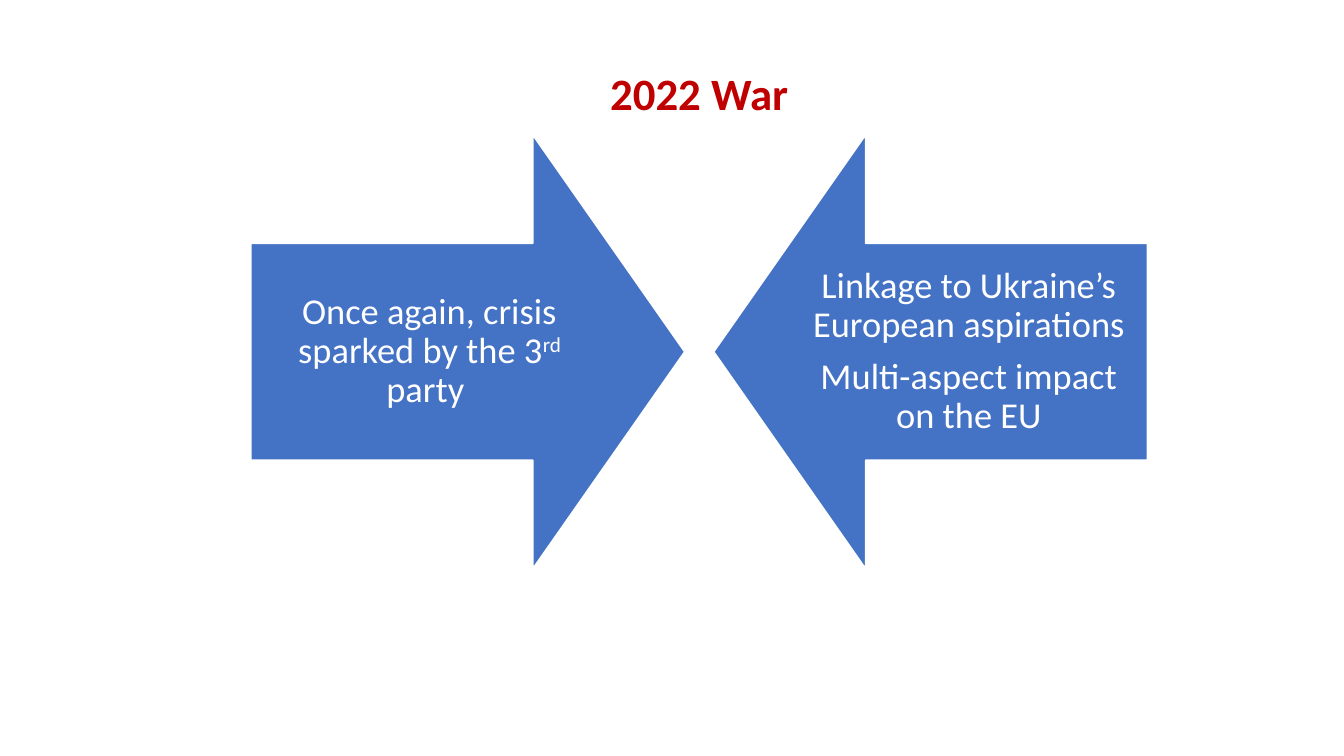
from dataclasses import dataclass

from pptx import Presentation
from pptx.dml.color import RGBColor
from pptx.enum.shapes import MSO_SHAPE
from pptx.enum.text import MSO_ANCHOR, MSO_AUTO_SIZE, PP_ALIGN
from pptx.util import Inches, Pt

ARROW = MSO_SHAPE.DOWN_ARROW
TOP, MIDDLE = MSO_ANCHOR.TOP, MSO_ANCHOR.MIDDLE
CENTER = PP_ALIGN.CENTER
NO_FIT = MSO_AUTO_SIZE.NONE


@dataclass(frozen=True)
class Theme:
    font: str = "Calibri"
    red: RGBColor = RGBColor(0xC0, 0x00, 0x00)
    blue: RGBColor = RGBColor(0x44, 0x72, 0xC4)
    white: RGBColor = RGBColor(0xFF, 0xFF, 0xFF)
    head: int = 32
    body: int = 26


THEME = Theme()

# Arrow size, and the text box that sits in its shaft
SIDE, ROW = 4.3, 1.34
WIDE, HIGH = 3.54, 2.15


def put_text(frame, paras, size, color, bold=False, anchor=MIDDLE,
             pad=(0.2, 0.2), after=0):
    """Fill a frame; each paragraph is a list of (text, raise) runs."""
    frame.word_wrap = True
    frame.auto_size = NO_FIT
    frame.vertical_anchor = anchor
    frame.margin_left = frame.margin_right = Inches(pad[0])
    frame.margin_top = frame.margin_bottom = Inches(pad[1])
    for i, runs in enumerate(paras):
        para = frame.add_paragraph() if i else frame.paragraphs[0]
        para.alignment = CENTER
        para.line_spacing = 0.9
        para.space_before = Pt(0)
        para.space_after = Pt(after)
        for text, lift in runs:
            run = para.add_run()
            run.text = text
            run.font.name = THEME.font
            run.font.size = Pt(size)
            run.font.bold = bold
            run.font.color.rgb = color
            if lift:
                run.font._element.set("baseline", str(lift * 1000))


def add_title(slide, text):
    title = slide.shapes.title
    title.left, title.top = Inches(1.25), Inches(0.66)
    title.width, title.height = Inches(11.37), Inches(0.49)
    put_text(title.text_frame, [[(text, 0)]], THEME.head, THEME.red,
             bold=True, anchor=TOP, pad=(0.1, 0.05))


def add_arrow(slide, left, turn, text_left, paras):
    # Arrow turned to point at the centre
    arrow = slide.shapes.add_shape(
        ARROW, Inches(left), Inches(ROW), Inches(SIDE), Inches(SIDE))
    arrow.rotation = turn
    arrow.adjustments[0] = 0.5
    arrow.adjustments[1] = 0.35
    arrow.shadow.inherit = False
    arrow.fill.solid()
    arrow.fill.fore_color.rgb = THEME.blue
    arrow.line.color.rgb = THEME.white
    arrow.line.width = Pt(1)

    # Upright label over the shaft
    top = ROW + (SIDE - HIGH) / 2
    box = slide.shapes.add_textbox(
        Inches(text_left), Inches(top), Inches(WIDE), Inches(HIGH))
    put_text(box.text_frame, paras, THEME.body, THEME.white,
             after=0.35 * THEME.body)


def main():
    deck = Presentation()
    deck.slide_width, deck.slide_height = Inches(13.33), Inches(7.5)
    slide = deck.slides.add_slide(deck.slide_layouts[5])

    add_title(slide, "2022 War")

    # Two arrows that face each other
    left, right = 2.49, 7.08
    add_arrow(slide, left, 270, left, [
        [("Once again, crisis sparked by the 3", 0), ("rd", 30),
         (" party ", 0)]])
    add_arrow(slide, right, 90, right + SIDE - WIDE, [
        [("Linkage to Ukraine’s European aspirations ", 0)],
        [("Multi-aspect impact on the EU", 0)]])

    deck.save("out.pptx")


if __name__ == "__main__":
    main()
